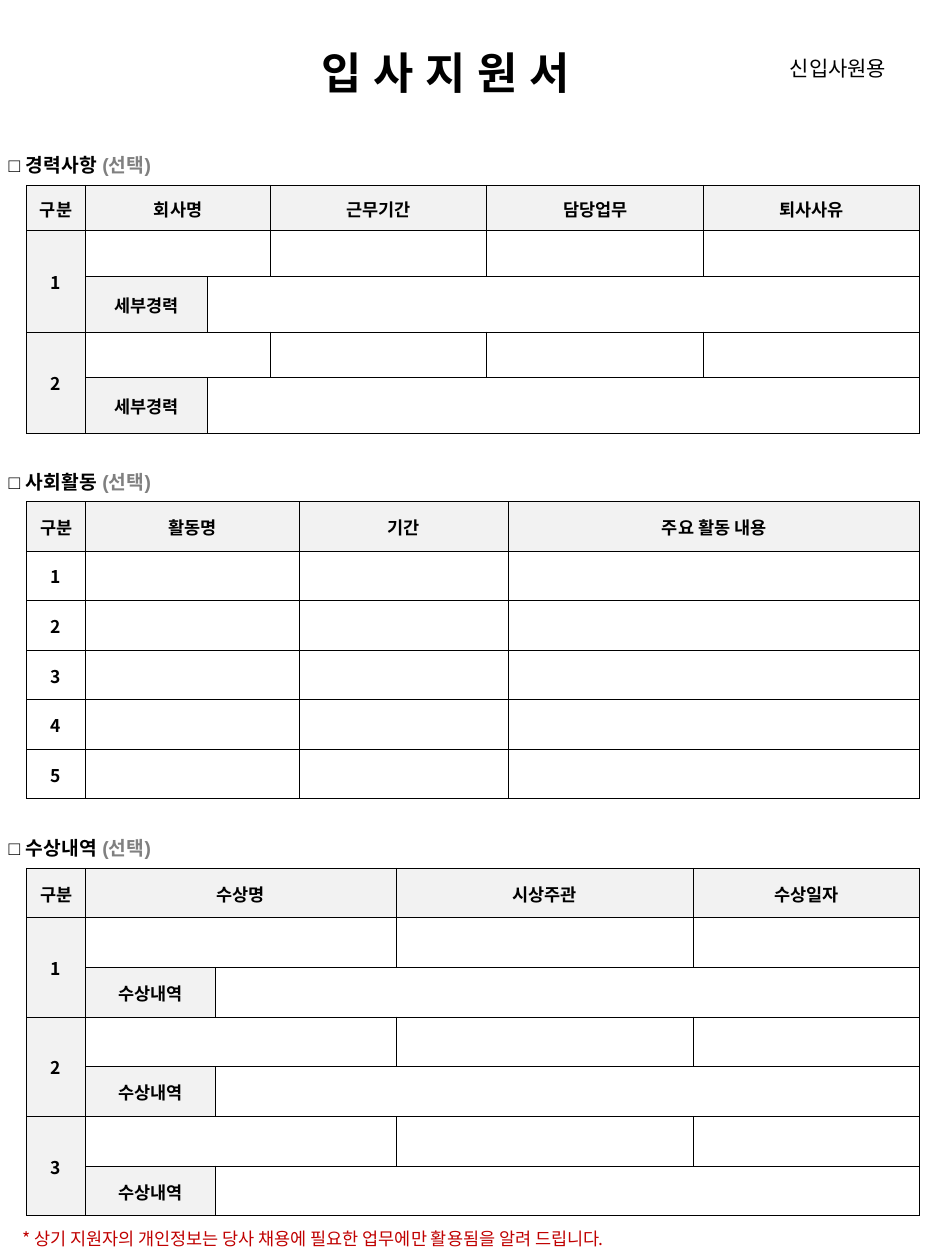
import lxml.etree
import pptx
import pptx.dml.color
import pptx.enum.text
import pptx.oxml.ns
import pptx.util

GRID_COLUMNS, GRID_ROWS = 750, 1000
UNIT = pptx.util.Inches(7.5) // GRID_COLUMNS
SANS, KOREAN = "Arial", "Noto Sans CJK KR"
BLACK, GREY, RED, WHITE, SHADE = "000000", "808080", "C00000", "FFFFFF", "F2F2F2"
MIDDLE = pptx.enum.text.MSO_ANCHOR.MIDDLE
TOP = pptx.enum.text.MSO_ANCHOR.TOP
CENTER = pptx.enum.text.PP_ALIGN.CENTER


def color(value):
    """Turn a hex string into a colour."""
    return pptx.dml.color.RGBColor.from_string(value)


def add_child(parent, tag, **attributes):
    """Append an XML element with a prefixed tag."""
    return lxml.etree.SubElement(parent, pptx.oxml.ns.qn(tag), **attributes)


def format_span(span, size, font, value, bold):
    """Set the look of one run, for Latin and Korean letters alike."""
    span.font.size = pptx.util.Pt(size)
    span.font.name = font
    span.font.bold = bold
    span.font.color.rgb = color(value)
    add_child(span.font._element, "a:ea", typeface=font)


def add_text(page, area, pieces, size, font=SANS, bold=False, anchor=TOP):
    """Place a line of coloured pieces in an area of grid units."""
    box = page.shapes.add_textbox(*(UNIT * length for length in area))
    frame = box.text_frame
    frame.word_wrap = True
    frame.vertical_anchor = anchor
    for words, value in pieces:
        span = frame.paragraphs[0].add_run()
        span.text = words
        format_span(span, size, font, value, bold)


def format_cell(cell):
    """Give a cell thin black borders, tight margins and a white fill."""
    cell.margin_left = cell.margin_right = cell.margin_top = UNIT
    cell.margin_bottom = 0
    cell.vertical_anchor = MIDDLE
    properties = cell._tc.get_or_add_tcPr()
    for side in ("a:lnL", "a:lnR", "a:lnT", "a:lnB"):
        line = add_child(properties, side, w=str(pptx.util.Pt(0.5)))
        fill = add_child(line, "a:solidFill")
        add_child(fill, "a:srgbClr", val=BLACK)
    cell.fill.solid()
    cell.fill.fore_color.rgb = color(WHITE)
    add_child(cell.text_frame.paragraphs[0]._p, "a:endParaRPr", sz="1000")


def label_cell(cell, words, shade=SHADE):
    """Write a bold centred label on a shaded cell."""
    para = cell.text_frame.paragraphs[0]
    para.text = words
    para.alignment = CENTER
    format_span(para.runs[0], 10, KOREAN, BLACK, True)
    cell.fill.fore_color.rgb = color(shade)


def add_section(page, title, area, columns, rows, headers, detail=None):
    """Place a heading and its form table; detail names a second row per entry."""
    left, top, width, height = area
    add_text(page, (-3, top - 30, 347, 29),
             [(f"□ {title} ", BLACK), ("(선택)", GREY)], 11, bold=True)
    table = page.shapes.add_table(
        len(rows), len(columns), *(UNIT * length for length in area)).table
    table.first_row = table.horz_banding = False
    for column, share in zip(table.columns, columns):
        column.width = round(UNIT * width * share / sum(columns))
    for row, share in zip(table.rows, rows):
        row.height = round(UNIT * height * share / sum(rows))
    for cell in table.iter_cells():
        format_cell(cell)

    first, last = (2, len(columns) - 1) if detail else (1, len(columns) - 1)
    places = [0, 1, *range(first + 1, last + 1)]
    for place, words in zip(places, headers):
        label_cell(table.cell(0, place), words)
    if detail:
        table.cell(0, 1).merge(table.cell(0, 2))
    step = 2 if detail else 1
    for number, start in enumerate(range(1, len(rows), step), 1):
        label_cell(table.cell(start, 0), str(number), SHADE if detail else WHITE)
        if detail:
            label_cell(table.cell(start + 1, 1), detail)
            table.cell(start, 0).merge(table.cell(start + 1, 0))
            table.cell(start, 1).merge(table.cell(start, 2))
            table.cell(start + 1, 2).merge(table.cell(start + 1, last))


def add_header(page, area):
    """Place the form title and the kind of applicant."""
    left, top, width, height = area
    add_text(page, (left, top, width * 0.58, height),
             [("입 사 지 원 서", BLACK)], 25, bold=True, anchor=MIDDLE)
    add_text(page, (left + width - 104, top + 8, 115, 30),
             [("신입사원용", BLACK)], 12, anchor=MIDDLE)


def main():
    """Build the application form."""
    deck = pptx.Presentation()
    deck.slide_width = UNIT * GRID_COLUMNS
    deck.slide_height = UNIT * GRID_ROWS
    page = deck.slides.add_slide(deck.slide_layouts[6])
    add_header(page, (245, 31, 476, 52))
    add_section(page, "경력사항", (21, 147, 709, 197),
                [47, 97, 50, 172, 172, 172], [36, 36, 44, 36, 44],
                ["구분", "회사명", "근무기간", "담당업무", "퇴사사유"], "세부경력")
    add_section(page, "사회활동", (21, 398, 709, 236),
                [47, 169, 166, 326], [1] * 6,
                ["구분", "활동명", "기간", "주요 활동 내용"])
    add_section(page, "수상내역", (21, 689, 709, 276),
                [47, 103, 143, 236, 179], [1] * 7,
                ["구분", "수상명", "시상주관", "수상일자"], "수상내역")
    add_text(page, (8, 970, 692, 27),
             [("* 상기 지원자의 개인정보는 당사 채용에 필요한 업무에만 활용됨을 알려 드립니다.", RED)],
             10, KOREAN)
    deck.save("out.pptx")


if __name__ == "__main__":
    main()
